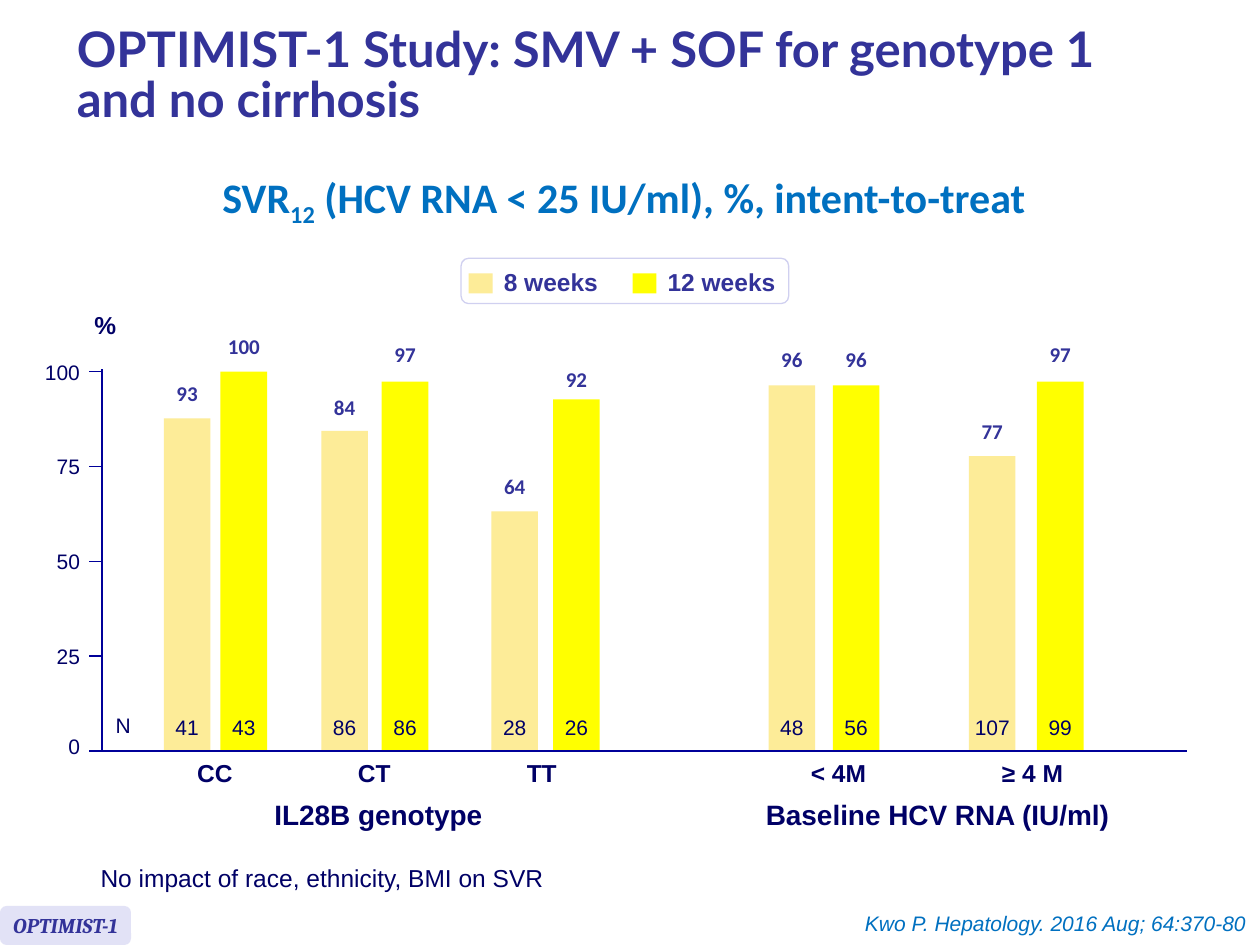
from lxml.etree import SubElement
from pptx import Presentation
from pptx.dml.color import RGBColor
from pptx.enum.shapes import MSO_CONNECTOR, MSO_SHAPE
from pptx.enum.text import MSO_ANCHOR, MSO_AUTO_SIZE, PP_ALIGN
from pptx.oxml.ns import qn
from pptx.util import Inches, Pt

# Content
TITLE = "OPTIMIST-1 Study: SMV + SOF for genotype 1\nand no cirrhosis"
SUBTITLE = [("SVR", 0), ("12", -25), (" (HCV RNA < 25 IU/ml), %, intent-to-treat ", 0)]
NOTE = "No impact of race, ethnicity, BMI on SVR"
BADGE = "OPTIMIST-1"
CITATION = "Kwo P. Hepatology. 2016 Aug; 64:370-80"
TICKS = [0, 25, 50, 75, 100]
# Legend: name, colour, swatch left, text width
LEGEND = [("8 weeks", "week8", 3.72, 0.96), ("12 weeks", "week12", 5.02, 1.06)]
# Group heading, left, width
HEADINGS = [("IL28B genotype", 2.08, 1.87), ("Baseline HCV RNA (IU/ml)", 5.98, 2.96)]
# Category, label left and width, then per arm: rate, N, left, bar height, label gap
CATEGORIES = [
    ("CC", 1.46, 0.49, [(93, 41, 1.30, 2.64, 0.40), (100, 43, 1.75, 3.01, 0.40)]),
    ("CT", 2.74, 0.46, [(84, 86, 2.55, 2.54, 0.39), (97, 86, 3.03, 2.93, 0.42)]),
    ("TT", 4.08, 0.44, [(64, 28, 3.90, 1.90, 0.40), (92, 26, 4.39, 2.79, 0.36)]),
    ("< 4M", 6.33, 0.65, [(96, 48, 6.10, 2.90, 0.41), (96, 56, 6.61, 2.90, 0.41)]),
    ("≥ 4 M", 7.85, 0.69, [(77, 107, 7.69, 2.34, 0.40), (97, 99, 8.23, 2.93, 0.42)]),
]
COLORS = {
    "title": "333399", "sub": "0070C0", "text": "000066", "axis": "000099",
    "week8": "FDEC98", "week12": "FFFF00", "badge": "E2E2F6",
    "frame": "D0D0F0", "white": "FFFFFF",
}

# Plot geometry
BASE, PLOT_H, AXIS_X, AXIS_END, TICK = 5.96, 3.01, 0.81, 9.42, 0.10
AXIS_TOP = 2.93
BAR_W, DIGIT_W = 0.37, 0.09
LEFT, CENTER, RIGHT = PP_ALIGN.LEFT, PP_ALIGN.CENTER, PP_ALIGN.RIGHT

prs = Presentation()
prs.slide_width, prs.slide_height = Inches(10), Inches(7.5)
s = prs.slides.add_slide(prs.slide_layouts[5])


def rgb(name):
    return RGBColor.from_string(COLORS[name])


def write(sp, text, size=12, font="Arial", color="text", bold=False, italic=False,
          align=LEFT, anchor=MSO_ANCHOR.TOP, inset=None, spacing=None, wrap=False):
    """Fill a shape with one paragraph; text is a string or (text, baseline %) pairs."""
    tf = sp.text_frame
    tf.word_wrap, tf.vertical_anchor = wrap, anchor
    if inset is not None:
        tf.margin_left = tf.margin_right = Inches(inset)
        tf.margin_top = tf.margin_bottom = Inches(inset)
    p = tf.paragraphs[0]
    p.alignment = align
    if spacing:
        p.line_spacing = spacing
    for part, baseline in [(text, 0)] if isinstance(text, str) else text:
        for i, line in enumerate(part.split("\n")):
            if i:
                p.add_line_break()
            r = p.add_run()
            r.text = line
            f = r.font
            f.size, f.name, f.bold, f.italic = Pt(size), font, bold, italic
            f.color.rgb = rgb(color)
            if baseline:
                r._r.get_or_add_rPr().set("baseline", str(baseline * 1000))


def label(text, x, y, w, h, **fmt):
    sp = s.shapes.add_textbox(Inches(x), Inches(y), Inches(w), Inches(h))
    write(sp, text, **fmt)
    sp.text_frame.auto_size = MSO_AUTO_SIZE.SHAPE_TO_FIT_TEXT


def bar_label(value, bar_x, y, h, **fmt):
    """Centre a number on its bar, in a box that widens with its digits."""
    text = str(value)
    w = 0.22 + DIGIT_W * len(text)
    label(text, bar_x + (BAR_W - w) / 2, y, w, h, align=CENTER, **fmt)


def block(x, y, w, h, fill, line=None, kind=MSO_SHAPE.RECTANGLE):
    sp = s.shapes.add_shape(kind, Inches(x), Inches(y), Inches(w), Inches(h))
    sp.shadow.inherit = False
    sp.fill.solid()
    sp.fill.fore_color.rgb = rgb(fill)
    if line:
        sp.line.color.rgb, sp.line.width = rgb(line), Pt(0.75)
    else:
        sp.line.fill.background()
    return sp


def axis_line(x1, y1, x2, y2):
    c = s.shapes.add_connector(MSO_CONNECTOR.STRAIGHT, Inches(x1), Inches(y1),
                               Inches(x2), Inches(y2))
    c.line.color.rgb, c.line.width = rgb("axis"), Pt(0.75)
    SubElement(c._element.spPr, qn("a:effectLst"))


# Title and subtitle
title = s.shapes.title
title.left, title.top, title.width, title.height = map(Inches, (0.51, 0.08, 9.13, 1.07))
write(title, TITLE, size=28, font="Lato", color="title", bold=True,
      anchor=MSO_ANCHOR.MIDDLE, spacing=0.85, wrap=True)
title.text_frame.auto_size = MSO_AUTO_SIZE.NONE
label(SUBTITLE, 1.55, 1.31, 6.88, 0.5, size=24, font="Calibri", color="sub",
      bold=True, align=CENTER)

# Bars with rates, patient numbers and category names
for name, name_x, name_w, arms in CATEGORIES:
    for (rate, n, x, height, gap), fill in zip(arms, ("week8", "week12")):
        top = BASE - height
        block(x, top, BAR_W, height, fill)
        bar_label(rate, x, top - gap, 0.4, font="Calibri", color="title",
                  bold=True, inset=0.1)
        bar_label(n, x, 5.62, 0.3)
    label(name, name_x, 5.97, name_w, 0.34, size=14, bold=True, align=CENTER)
for text, x, w in HEADINGS:
    label(text, x, 6.28, w, 0.37, size=16, bold=True)
label("N", 0.82, 5.61, 0.32, 0.3)

# Axes
axis_line(AXIS_X, AXIS_TOP, AXIS_X, BASE)
axis_line(AXIS_X - TICK, BASE, AXIS_END, BASE)
for tick in TICKS:
    y = BASE - PLOT_H * tick / 100
    if tick:
        axis_line(AXIS_X - TICK, y, AXIS_X, y)
    width = 0.095 * len(str(tick))
    label_y = y - 0.1 if tick else y - 0.14
    label(str(tick), 0.635 - width, label_y, width, 0.2, align=RIGHT,
          anchor=MSO_ANCHOR.MIDDLE, inset=0)
label("%", 0.65, 2.41, 0.38, 0.34, size=14, bold=True)

# Legend
block(3.66, 2.05, 2.6, 0.36, "white", "frame", MSO_SHAPE.ROUNDED_RECTANGLE)
for text, fill, x, w in LEGEND:
    block(x, 2.17, 0.19, 0.16, fill)
    label(text, x + 0.18, 2.07, w, 0.34, size=14, color="title", bold=True)

# Note, study badge and citation
label(NOTE, 0.7, 6.8, 3.74, 0.34, size=14)
badge = block(0, 7.19, 1.04, 0.31, "badge", kind=MSO_SHAPE.ROUNDED_RECTANGLE)
write(badge, BADGE, font="Cambria", color="title", bold=True, italic=True,
      align=CENTER, anchor=MSO_ANCHOR.MIDDLE)
label(CITATION, 6.74, 7.18, 3.25, 0.3, color="sub", italic=True, align=RIGHT)

prs.save("out.pptx")
